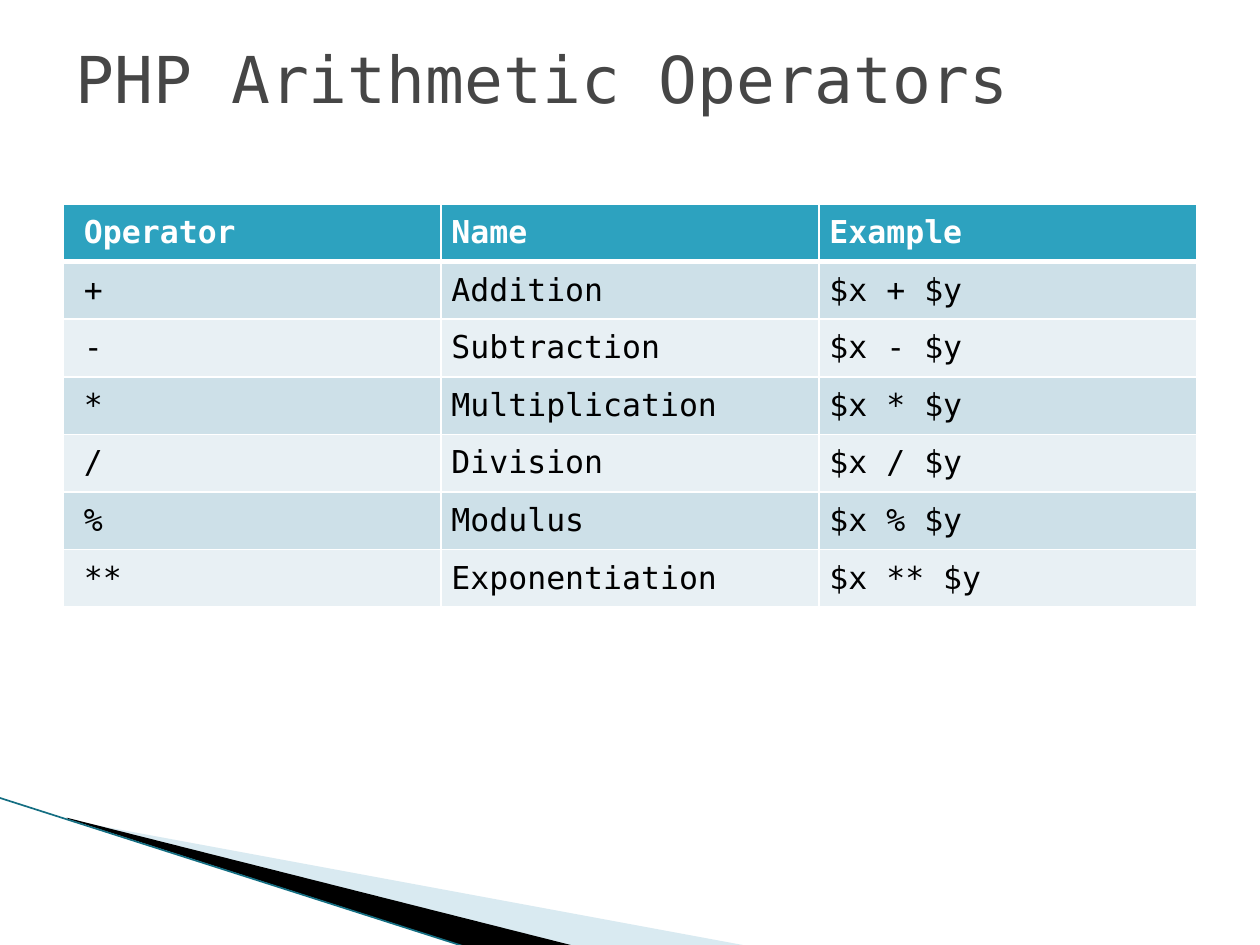
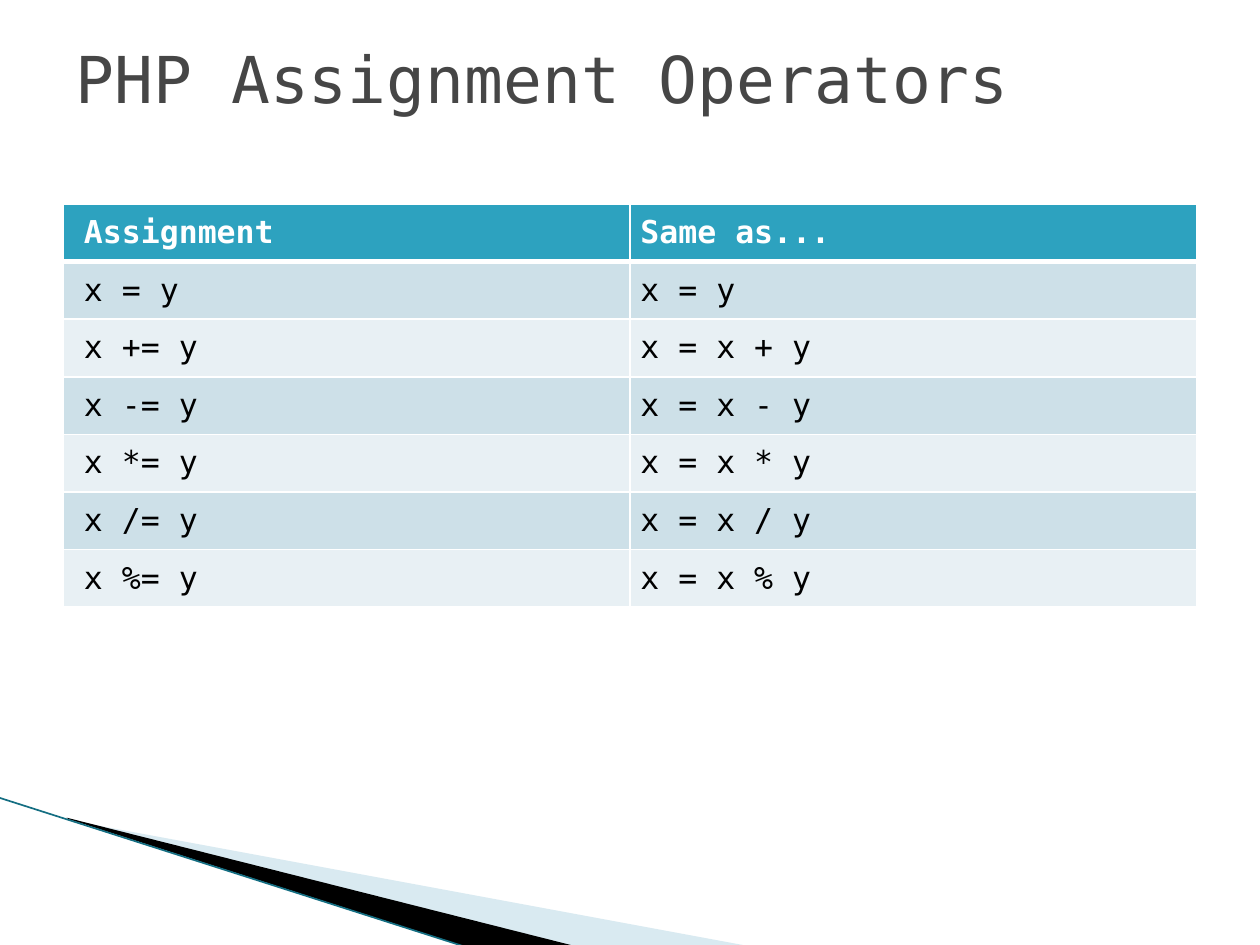
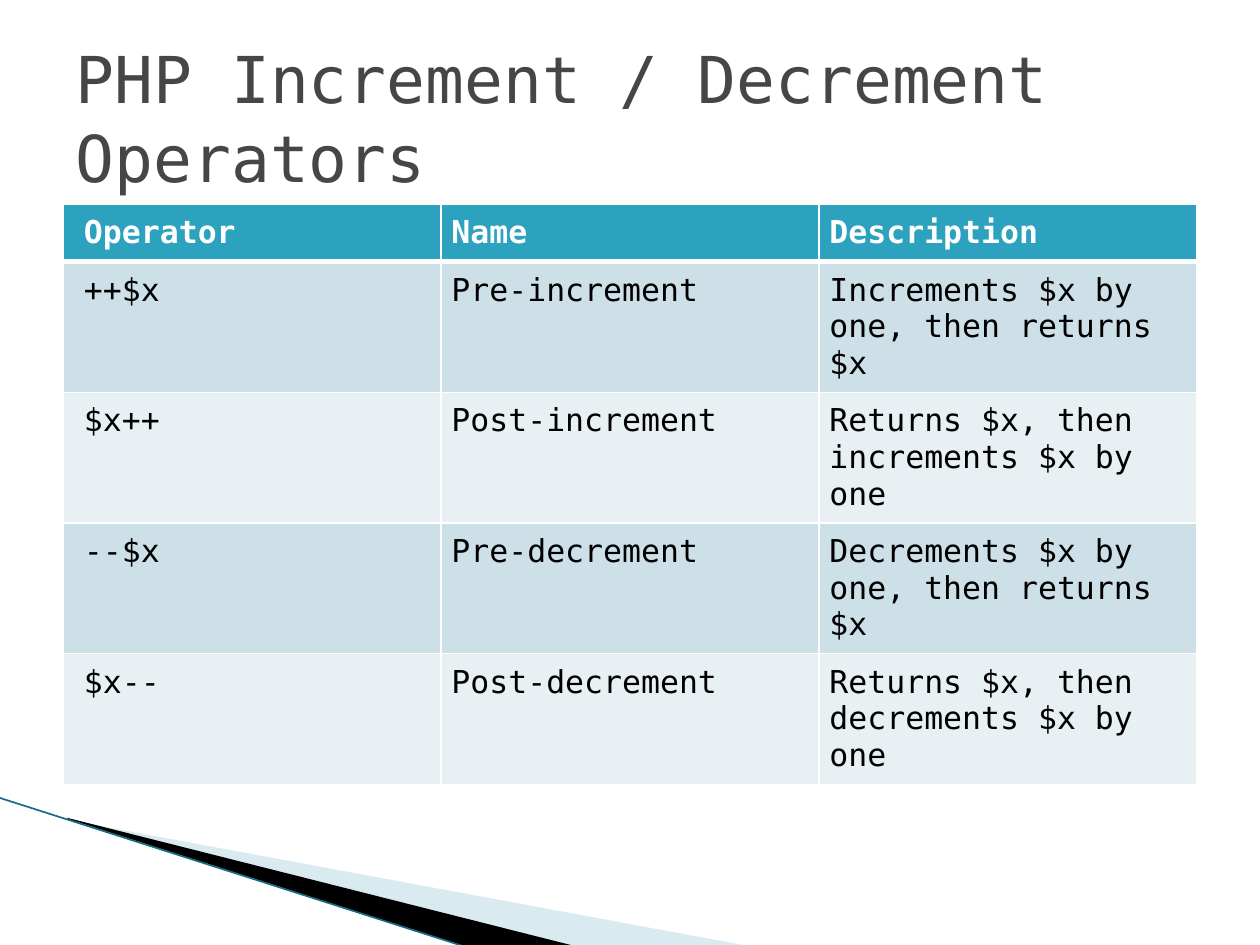
from dataclasses import dataclass

from lxml.etree import SubElement
from pptx import Presentation
from pptx.dml.color import RGBColor
from pptx.enum.shapes import MSO_CONNECTOR
from pptx.enum.text import MSO_ANCHOR, MSO_AUTO_SIZE, PP_ALIGN
from pptx.oxml import parse_xml
from pptx.oxml.ns import nsdecls, qn
from pptx.util import Inches, Pt

OPERATOR_TABLES = [
    ("PHP Arithmetic Operators", [
        ("Operator", "Name", "Example"),
        ("+", "Addition", "$x + $y"),
        ("-", "Subtraction", "$x - $y"),
        ("*", "Multiplication", "$x * $y"),
        ("/", "Division", "$x / $y"),
        ("%", "Modulus", "$x % $y"),
        ("**", "Exponentiation", "$x ** $y"),
    ]),
    ("PHP Assignment Operators", [
        ("Assignment", "Same as..."),
        ("x = y", "x = y"),
        ("x += y", "x = x + y"),
        ("x -= y", "x = x - y"),
        ("x *= y", "x = x * y"),
        ("x /= y", "x = x / y"),
        ("x %= y", "x = x % y"),
    ]),
    ("PHP Increment / Decrement Operators", [
        ("Operator", "Name", "Description"),
        ("++$x", "Pre-increment", "Increments $x by one, then returns $x"),
        ("$x++", "Post-increment", "Returns $x, then increments $x by one"),
        ("--$x", "Pre-decrement", "Decrements $x by one, then returns $x"),
        ("$x--", "Post-decrement", "Returns $x, then decrements $x by one"),
    ]),
]


@dataclass(frozen=True)
class Theme:
    font: str = "DejaVu Sans Mono"
    title_size: float = 36.9
    title_leading: float = 45
    cell_size: float = 18
    title: str = "464646"
    header: str = "2DA2BF"
    header_text: str = "FFFFFF"
    cell_text: str = "000000"
    stripes: tuple = ("CDE0E8", "E8F0F4")
    border: str = "FFFFFF"
    pale_band: str = "A0CBDC"
    dark_band: str = "000000"
    edge: str = "146E82"


THEME = Theme()
LEFT, CONTENT_WIDTH = 0.5, 9
TITLE_TOP, TITLE_HEIGHT = 0.3, 1.25
TABLE_TOP, ROW_HEIGHT = 1.62, 0.41
CELL_INSET, FIRST_COLUMN_INSET = Pt(6), Pt(12)
THIN, THICK = 1, 3

# Frame (left, top, width, height) and corner points in inches,
# fill colour, opacity in percent
BANDS = [
    ((0.78, 5.47, 4.16, 1.58),
     [(0.55, 6.51), (5.95, 7.51), (4.56, 7.51), (0.55, 6.5)],
     THEME.pale_band, 40),
    ((-0.06, 6.33, 4.16, 0.92),
     [(0.53, 6.49), (4.57, 7.51), (3.72, 7.52), (0.54, 6.5)],
     THEME.dark_band, 100),
]
EDGE_START, EDGE_END = (-0.01, 6.33), (3.71, 7.52)


def rgb(code):
    return RGBColor.from_string(code)


def format_text(paragraph, size, color, bold=False):
    for run in paragraph.runs:
        run.font.name = THEME.font
        run.font.size = Pt(size)
        run.font.bold = bold
        run.font.color.rgb = rgb(color)


def set_frame(band, frame):
    """Give a freeform a new frame while its outline stays in place."""
    left, top, width, height = map(Inches, frame)
    shift_x, shift_y = band.left - left, band.top - top
    outline = next(band._element.iter(qn("a:path")))
    outline.set("w", str(width))
    outline.set("h", str(height))
    for point in outline.iter(qn("a:pt")):
        point.set("x", str(int(point.get("x")) + shift_x))
        point.set("y", str(int(point.get("y")) + shift_y))
    band.left, band.top, band.width, band.height = left, top, width, height


def add_corner_bands(slide):
    for frame, points, color, opacity in BANDS:
        corners = [(Inches(x), Inches(y)) for x, y in points]
        builder = slide.shapes.build_freeform(*corners[0])
        builder.add_line_segments(corners[1:], close=True)
        band = builder.convert_to_shape()
        set_frame(band, frame)
        band.shadow.inherit = False
        band.fill.solid()
        band.fill.fore_color.rgb = rgb(color)
        band.line.fill.background()
        if opacity < 100:
            fill_color = band.fill._xPr.find(qn("a:solidFill"))[0]
            SubElement(fill_color, qn("a:alpha")).set("val", str(opacity * 1000))

    edge = slide.shapes.add_connector(
        MSO_CONNECTOR.STRAIGHT, *map(Inches, EDGE_START + EDGE_END))
    edge.line.color.rgb = rgb(THEME.edge)
    edge.line.width = Pt(0.95)
    SubElement(edge._element.spPr, qn("a:effectLst"))


def set_title(slide, heading):
    title = slide.shapes.title
    title.left, title.top = Inches(LEFT), Inches(TITLE_TOP)
    title.width, title.height = Inches(CONTENT_WIDTH), Inches(TITLE_HEIGHT)
    frame = title.text_frame
    frame.text = heading
    frame.word_wrap = True
    frame.auto_size = MSO_AUTO_SIZE.NONE
    frame.vertical_anchor = MSO_ANCHOR.TOP
    frame.margin_left = frame.margin_right = Inches(0.1)
    frame.margin_top = frame.margin_bottom = 0
    paragraph = frame.paragraphs[0]
    paragraph.alignment = PP_ALIGN.LEFT
    paragraph.line_spacing = Pt(THEME.title_leading)
    format_text(paragraph, THEME.title_size, THEME.title)


def set_borders(cell, top, bottom):
    """Draw all four cell borders; the side ones are thin."""
    widths = {"lnL": THIN, "lnR": THIN, "lnT": top, "lnB": bottom}
    properties = cell._tc.get_or_add_tcPr()
    for position, (side, width) in enumerate(widths.items()):
        properties.insert(position, parse_xml(
            f'<a:{side} {nsdecls("a")} w="{Pt(width)}"><a:solidFill>'
            f'<a:srgbClr val="{THEME.border}"/></a:solidFill></a:{side}>'))


def format_cell(cell, row, column):
    is_header = row == 0
    cell.margin_left = CELL_INSET if column else FIRST_COLUMN_INSET
    cell.margin_right = cell.margin_top = cell.margin_bottom = CELL_INSET
    cell.fill.solid()
    cell.fill.fore_color.rgb = rgb(
        THEME.header if is_header else THEME.stripes[(row - 1) % 2])
    set_borders(cell, top=THICK if row == 1 else THIN,
                bottom=THICK if is_header else THIN)
    format_text(cell.text_frame.paragraphs[0], THEME.cell_size,
                THEME.header_text if is_header else THEME.cell_text, is_header)


def add_operator_table(slide, rows):
    column_count = len(rows[0])
    table = slide.shapes.add_table(
        len(rows), column_count, Inches(LEFT), Inches(TABLE_TOP),
        Inches(CONTENT_WIDTH), Inches(ROW_HEIGHT * len(rows))).table
    for column in table.columns:
        column.width = Inches(CONTENT_WIDTH / column_count)
    for r, entries in enumerate(rows):
        for c, entry in enumerate(entries):
            cell = table.cell(r, c)
            cell.text_frame.text = entry
            format_cell(cell, r, c)


def main():
    deck = Presentation()
    deck.slide_width, deck.slide_height = Inches(10), Inches(7.5)
    title_only = deck.slide_layouts.get_by_name("Title Only")
    for heading, rows in OPERATOR_TABLES:
        slide = deck.slides.add_slide(title_only)
        add_corner_bands(slide)
        set_title(slide, heading)
        add_operator_table(slide, rows)
    deck.save("out.pptx")


if __name__ == "__main__":
    main()
